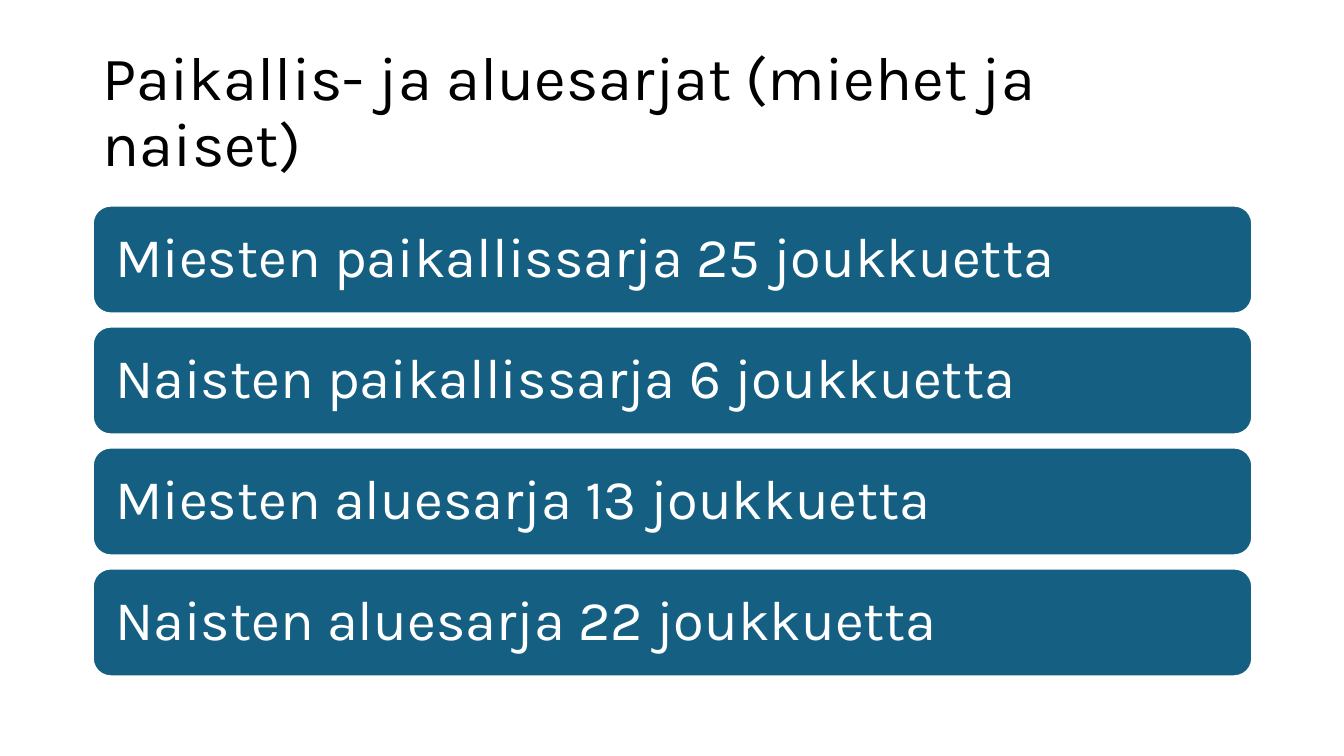
from dataclasses import dataclass

import pptx
import pptx.dml.color
import pptx.enum.shapes
import pptx.enum.text
import pptx.slide
import pptx.text.text
import pptx.util

Inches = pptx.util.Inches
RGB = pptx.dml.color.RGBColor


@dataclass(frozen=True)
class Theme:
    font: str = "Karla"
    title_size: float = 44
    bar_size: float = 40
    line_width: float = 1.5
    black: RGB = RGB(0x00, 0x00, 0x00)
    white: RGB = RGB(0xFF, 0xFF, 0xFF)
    blue: RGB = RGB(0x15, 0x60, 0x82)


@dataclass(frozen=True)
class SeriesBar:
    series: str
    teams: int


THEME = Theme()
LEFT, WIDTH = 0.92, 11.5
BAR_TOP, BAR_HEIGHT, BAR_PITCH = 2.04, 1.07, 1.2
BARS = [
    SeriesBar("Miesten paikallissarja", 25),
    SeriesBar("Naisten paikallissarja", 6),
    SeriesBar("Miesten aluesarja", 13),
    SeriesBar("Naisten aluesarja", 22),
]


def write_text(tf: pptx.text.text.TextFrame, text: str, size: float, color: RGB) -> None:
    tf.word_wrap = True
    tf.vertical_anchor = pptx.enum.text.MSO_ANCHOR.MIDDLE
    p = tf.paragraphs[0]
    p.alignment = pptx.enum.text.PP_ALIGN.LEFT
    p.line_spacing = 0.9
    r = p.add_run()
    r.text = text
    r.font.name = THEME.font
    r.font.size = pptx.util.Pt(size)
    r.font.color.rgb = color


def add_title(s: pptx.slide.Slide, text: str) -> None:
    sp = s.shapes.add_textbox(Inches(LEFT), Inches(0.4), Inches(WIDTH), Inches(1.45))
    write_text(sp.text_frame, text, THEME.title_size, THEME.black)


def add_bar(s: pptx.slide.Slide, bar: SeriesBar, top: float) -> None:
    sp = s.shapes.add_shape(
        pptx.enum.shapes.MSO_SHAPE.ROUNDED_RECTANGLE,
        Inches(LEFT), Inches(top), Inches(WIDTH), Inches(BAR_HEIGHT),
    )
    sp.shadow.inherit = False
    sp.fill.solid()
    sp.fill.fore_color.rgb = THEME.blue
    sp.line.color.rgb = THEME.white
    sp.line.width = pptx.util.Pt(THEME.line_width)
    tf = sp.text_frame
    tf.margin_left = tf.margin_right = tf.margin_top = tf.margin_bottom = Inches(0.17)
    write_text(tf, f"{bar.series} {bar.teams} joukkuetta", THEME.bar_size, THEME.white)


def main() -> None:
    prs = pptx.Presentation()
    prs.slide_width, prs.slide_height = Inches(13.33), Inches(7.5)
    s = prs.slides.add_slide(prs.slide_layouts[6])
    add_title(s, "Paikallis- ja aluesarjat (miehet ja naiset)")
    for i, bar in enumerate(BARS):
        add_bar(s, bar, BAR_TOP + i * BAR_PITCH)
    prs.save("out.pptx")


if __name__ == "__main__":
    main()
